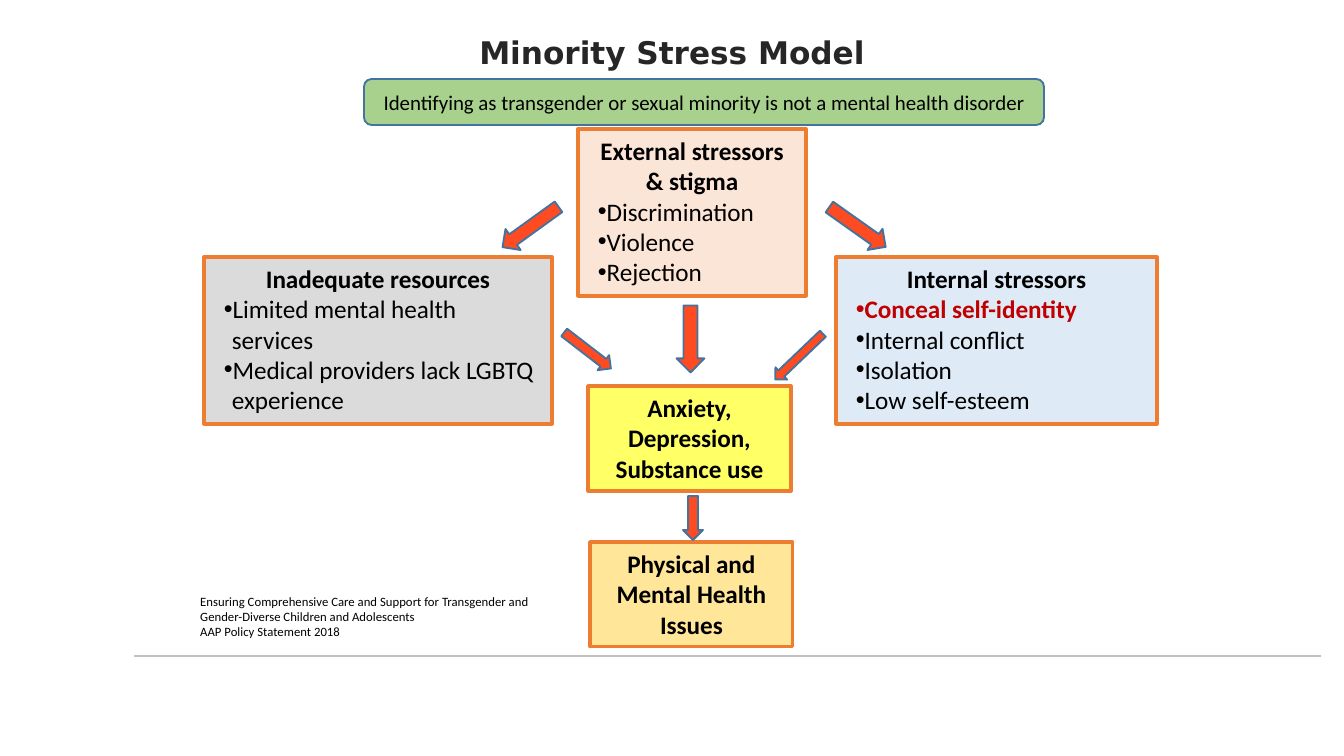
"""Build the Minority Stress Model slide."""
from dataclasses import dataclass

import lxml.etree
import pptx
import pptx.dml.color
import pptx.enum.shapes
import pptx.enum.text
import pptx.oxml.ns
import pptx.util

SHAPE = pptx.enum.shapes.MSO_SHAPE
ANCHOR = pptx.enum.text.MSO_ANCHOR
ALIGN = pptx.enum.text.PP_ALIGN
EMU_PER_PX = 914400 / 134.4


def px(n):
    return pptx.util.Emu(round(n * EMU_PER_PX))


def rgb(color):
    return pptx.dml.color.RGBColor.from_string(color)


@dataclass
class Theme:
    font: str = "Calibri"
    title_font: str = "DejaVu Sans"
    title_size: float = 16.7
    box_size: float = 13.5
    banner_size: float = 11.2
    source_size: float = 6.8
    text: str = "000000"
    title: str = "262626"
    alert: str = "C00000"
    rule: str = "C0C0C0"
    box_line: str = "ED7D31"
    line: str = "43739E"
    arrow: str = "FF4B21"
    banner: str = "A9D18E"
    external: str = "FBE5D6"
    internal: str = "DEEBF7"
    resources: str = "DBDBDB"
    symptoms: str = "FFFF66"
    outcome: str = "FFE699"


def write(p, text, font, size, color, bold=False, align=ALIGN.LEFT, bullet=False):
    p.alignment = align
    if bullet:
        pPr = p._p.get_or_add_pPr()
        pPr.set("marL", str(pptx.util.Inches(0.11)))
        pPr.set("indent", str(pptx.util.Inches(-0.06)))
        lxml.etree.SubElement(pPr, pptx.oxml.ns.qn("a:buFont")).set("typeface", "Arial")
        lxml.etree.SubElement(pPr, pptx.oxml.ns.qn("a:buChar")).set("char", "•")
    r = p.add_run()
    r.text = text
    r.font.name = font
    r.font.size = pptx.util.Pt(size)
    r.font.bold = bold
    r.font.color.rgb = rgb(color)


class Deck:
    def __init__(self, theme, width, height):
        self.theme = theme
        self.prs = pptx.Presentation()
        self.prs.slide_width, self.prs.slide_height = px(width), px(height)
        self.s = self.prs.slides.add_slide(self.prs.slide_layouts[6])

    def shape(self, kind, at, fill, line, weight=1):
        sp = self.s.shapes.add_shape(kind, *map(px, at))
        sp.shadow.inherit = False
        sp.fill.solid()
        sp.fill.fore_color.rgb = rgb(fill)
        sp.line.color.rgb = rgb(line)
        sp.line.width = pptx.util.Pt(weight)
        return sp

    def rule(self, x1, x2, y):
        c = self.s.shapes.add_connector(
            pptx.enum.shapes.MSO_CONNECTOR.STRAIGHT, px(x1), px(y), px(x2), px(y))
        c.line.color.rgb = rgb(self.theme.rule)
        c.line.width = pptx.util.Pt(1)
        lxml.etree.SubElement(c._element.spPr, pptx.oxml.ns.qn("a:effectLst"))

    def title(self, at, text):
        tf = self.s.shapes.add_textbox(*map(px, at)).text_frame
        tf.word_wrap = True
        tf.margin_left = tf.margin_top = tf.margin_right = tf.margin_bottom = 0
        p = tf.paragraphs[0]
        p.line_spacing = pptx.util.Pt(35)
        write(p, text, self.theme.title_font, self.theme.title_size,
              self.theme.title, bold=True, align=ALIGN.CENTER)

    def box(self, at, fill, heading, bullets=(), alert=None):
        t = self.theme
        tf = self.shape(SHAPE.RECTANGLE, at, fill, t.box_line, 1.75).text_frame
        tf.word_wrap = True
        tf.auto_size = pptx.enum.text.MSO_AUTO_SIZE.SHAPE_TO_FIT_TEXT
        tf.vertical_anchor = ANCHOR.TOP
        write(tf.paragraphs[0], heading, t.font, t.box_size, t.text,
              bold=True, align=ALIGN.CENTER)
        for text in bullets:
            hot = text == alert
            write(tf.add_paragraph(), text, t.font, t.box_size,
                  t.alert if hot else t.text, bold=hot, bullet=True)

    def arrow(self, at, angle):
        sp = self.shape(SHAPE.RIGHT_ARROW, at, self.theme.arrow, self.theme.line)
        sp.rotation = angle

    def banner(self, at, text):
        t = self.theme
        tf = self.shape(SHAPE.ROUNDED_RECTANGLE, at, t.banner, t.line).text_frame
        tf.word_wrap = True
        tf.vertical_anchor = ANCHOR.MIDDLE
        write(tf.paragraphs[0], text, t.font, t.banner_size, t.text, align=ALIGN.CENTER)

    def source(self, at, lines):
        t = self.theme
        tf = self.s.shapes.add_textbox(*map(px, at)).text_frame
        tf.word_wrap = True
        for i, text in enumerate(lines):
            p = tf.add_paragraph() if i else tf.paragraphs[0]
            write(p, text, t.font, t.source_size, t.text)


def main():
    theme = Theme()
    deck = Deck(theme, 1344, 756)
    deck.rule(134, 1321, 656)
    deck.title((332, 5, 680, 48), "Minority Stress Model")

    deck.box((578, 129, 228, 167), theme.external, "External stressors & stigma",
             ("Discrimination", "Violence", "Rejection"))
    deck.box((836, 257, 321, 167), theme.internal, "Internal stressors",
             ("Conceal self-identity", "Internal conflict", "Isolation", "Low self-esteem"),
             alert="Conceal self-identity")
    deck.box((588, 386, 203, 105), theme.symptoms, "Anxiety, Depression, Substance use")
    deck.box((204, 257, 348, 167), theme.resources, "Inadequate resources",
             ("Limited mental health services", "Medical providers lack LGBTQ experience"))
    deck.box((590, 542, 203, 105), theme.outcome, "Physical and Mental Health Issues")

    for at, angle in (
        ((823, 214, 69, 26), 35.3),
        ((766, 348, 66, 17), 136.3),
        ((657, 325, 67, 28), 90),
        ((558, 341, 59, 19), 37.6),
        ((671, 508, 44, 20), 90),
        ((496, 214, 69, 26), 144.2),
    ):
        deck.arrow(at, angle)

    deck.banner((364, 79, 680, 46),
                "Identifying as transgender or sexual minority is not a mental health disorder")
    deck.source((187, 587, 371, 59), (
        "Ensuring Comprehensive Care and Support for Transgender and "
        "Gender-Diverse Children and Adolescents",
        "AAP Policy Statement 2018"))
    deck.prs.save("out.pptx")


if __name__ == "__main__":
    main()
